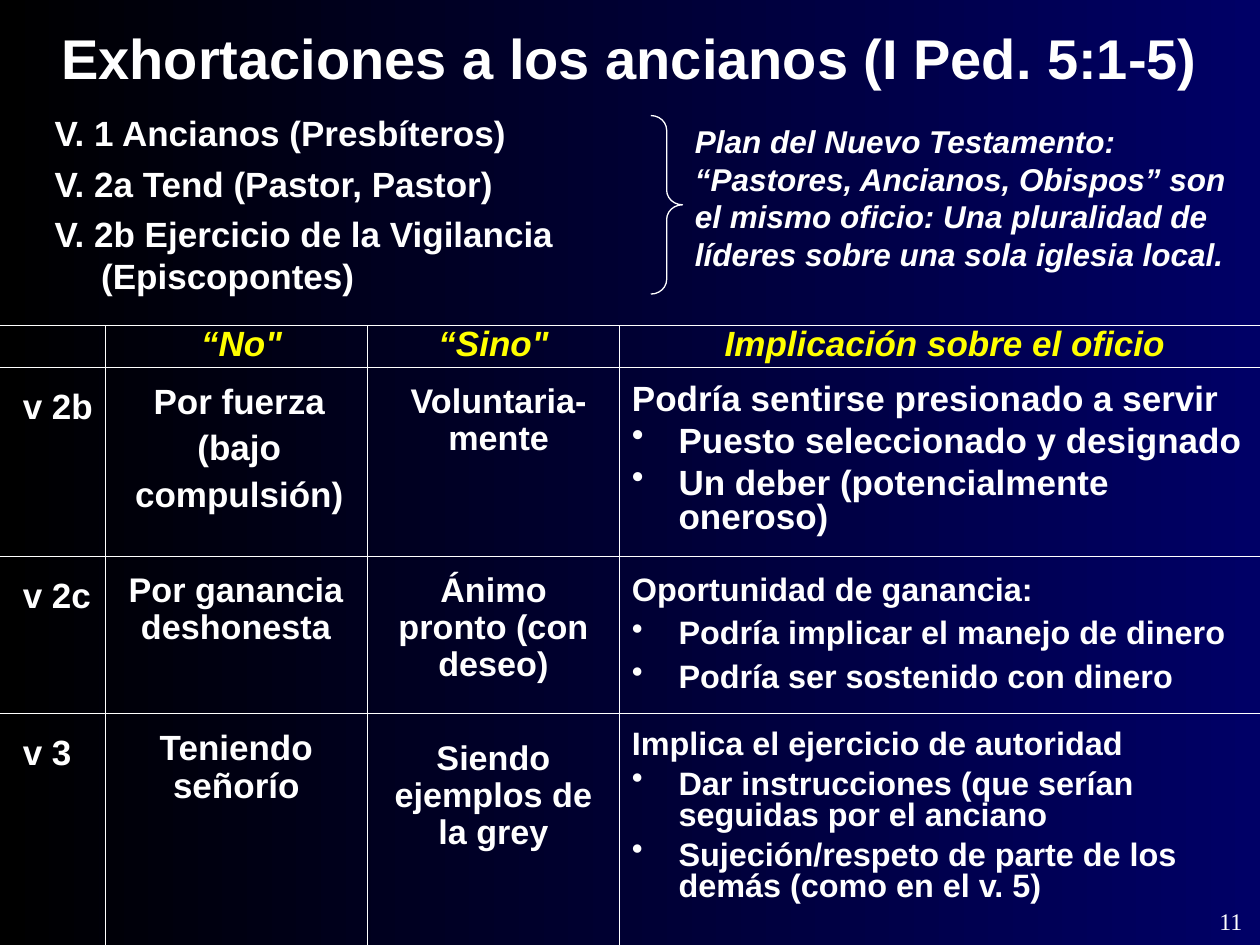
"""Slide of exhortations to elders: verses, a brace with a remark, and a ruled comparison grid."""
from dataclasses import dataclass

from lxml.etree import SubElement
from pptx import Presentation
from pptx.dml.color import RGBColor
from pptx.enum.shapes import MSO_CONNECTOR, MSO_SHAPE
from pptx.enum.text import MSO_ANCHOR, MSO_AUTO_SIZE, PP_ALIGN
from pptx.oxml.ns import qn
from pptx.util import Cm, Pt


@dataclass(frozen=True)
class Theme:
    white: RGBColor = RGBColor(0xFF, 0xFF, 0xFF)
    yellow: RGBColor = RGBColor(0xFF, 0xFF, 0x00)
    dark: RGBColor = RGBColor(0x00, 0x00, 0x00)
    navy: RGBColor = RGBColor(0x00, 0x00, 0x66)
    font: str = "Arial"
    number_font: str = "Times New Roman"
    title: float = 32
    body: float = 20
    cell: float = 19.5
    detail: float = 18.5
    remark: float = 18
    number: float = 13.6
    rule: float = 0.75
    gap: float = 5
    hang: float = 0.94


T = Theme()
WIDTH, HEIGHT = 25.4, 19.05
COLUMN_RULES = [2.12, 7.41, 12.49]
ROW_RULES = [6.56, 7.41, 11.22, 14.39]
CELL_GAP = 0.21

TITLE = "Exhortaciones a los ancianos (I Ped. 5:1-5)"
VERSES = [
    "V. 1 Ancianos (Presbíteros)",
    "V. 2a Tend (Pastor, Pastor)",
    "V. 2b Ejercicio de la Vigilancia (Episcopontes)",
]
REMARK = (
    "Plan del Nuevo Testamento: “Pastores, Ancianos, Obispos” son el mismo oficio: "
    "Una pluralidad de líderes sobre una sola iglesia local."
)
HEADERS = [
    ("“No\"", 3.6, 2.54),
    ("“Sino\"", 8.36, 3.18),
    ("Implicación sobre el oficio", 13.12, 11.86),
]
LABELS = [("v 2b", 2.54), ("v 2c", 4.02), ("v 3", 4.02)]
NO = [
    (["Por fuerza", "(bajo", "compulsión)"], 1.7, 6.25, 3.6, T.body, T.hang),
    (["Por ganancia deshonesta"], 2.12, 5.28, 3.18, T.cell, 0),
    (["Teniendo señorío"], 2.33, 4.87, 4.12, T.body, 0),
]
SINO = [
    ("Voluntaria-mente", 4.87, 3.39, 0),
    ("Ánimo pronto (con deseo)", 4.66, 2.75, 0),
    ("Siendo ejemplos de la grey", 4.66, 3.92, 0.21),
]
IMPLICATIONS = [
    ("Podría sentirse presionado a servir",
     ["Puesto seleccionado y designado", "Un deber (potencialmente oneroso)"],
     12.9, 3.6, T.body, 0.8),
    ("Oportunidad de ganancia:",
     ["Podría implicar el manejo de dinero", "Podría ser sostenido con dinero"],
     12.9, 2.96, T.detail, 0.9),
    ("Implica el ejercicio de autoridad",
     ["Dar instrucciones (que serían seguidas por el anciano",
      "Sujeción/respeto de parte de los demás (como en el v. 5)"],
     12.5, 4.12, T.detail, 0.8),
]


def write(p, text, size, color=T.white, italic=False, bold=True, font=T.font):
    r = p.add_run()
    r.text = text
    f = r.font
    f.name, f.size, f.bold, f.italic = font, Pt(size), bold, italic
    f.color.rgb = color


def add_bullet(p):
    pPr = p._p.get_or_add_pPr()
    clr = SubElement(pPr, qn("a:buClr"))
    SubElement(clr, qn("a:srgbClr"), val=str(T.white))
    SubElement(pPr, qn("a:buChar"), char="•")


def add_text(slide, box, lines, size, bullets=(), align=PP_ALIGN.LEFT, spacing=None,
             margin=T.hang, hang=T.hang, gap=T.gap, **look):
    tf = slide.shapes.add_textbox(*map(Cm, box)).text_frame
    tf.word_wrap = True
    tf.auto_size = MSO_AUTO_SIZE.NONE
    for i, text in enumerate([*lines, *bullets]):
        p = tf.add_paragraph() if i else tf.paragraphs[0]
        p.alignment = align
        p.space_before = Pt(gap)
        if spacing:
            p.line_spacing = spacing
        pPr = p._p.get_or_add_pPr()
        pPr.set("marL", str(Cm(margin)))
        pPr.set("indent", str(-Cm(hang)))
        if i >= len(lines):
            add_bullet(p)
        write(p, text, size, **look)


def add_rule(slide, x1, y1, x2, y2):
    sp = slide.shapes.add_connector(MSO_CONNECTOR.STRAIGHT, Cm(x1), Cm(y1), Cm(x2), Cm(y2))
    sp.line.color.rgb = T.white
    sp.line.width = Pt(T.rule)
    SubElement(sp._element.spPr, qn("a:effectLst"))


def set_background(slide):
    fill = slide.background.fill
    fill.gradient()
    fill.gradient_angle = 0
    for stop, color, position in zip(fill.gradient_stops, (T.dark, T.navy), (0, 1)):
        stop.color.rgb = color
        stop.position = position


def set_title(slide):
    sp = slide.shapes.title
    sp.left, sp.top, sp.width, sp.height = map(Cm, (0, 0.21, WIDTH, 1.9))
    tf = sp.text_frame
    tf.auto_size = MSO_AUTO_SIZE.NONE
    tf.vertical_anchor = MSO_ANCHOR.MIDDLE
    p = tf.paragraphs[0]
    p.alignment = PP_ALIGN.CENTER
    write(p, TITLE, T.title)


def add_intro(slide):
    add_text(slide, (0.85, 2.12, 12.7, 4.02), VERSES, T.body)
    sp = slide.shapes.add_shape(MSO_SHAPE.RIGHT_BRACE, Cm(13.12), Cm(2.33), Cm(0.64), Cm(3.6))
    sp.adjustments[0] = 0.46
    sp.shadow.inherit = False
    sp.fill.background()
    sp.line.color.rgb = T.white
    sp.line.width = Pt(T.rule)
    add_text(slide, (13.76, 2.33, 11.64, 3.36), [REMARK], T.remark,
             margin=0, hang=0, gap=0, italic=True)


def add_grid(slide):
    for x in COLUMN_RULES:
        add_rule(slide, x, ROW_RULES[0], x, HEIGHT)
    for y in ROW_RULES:
        add_rule(slide, 0, y, WIDTH, y)
    for text, left, width in HEADERS:
        add_text(slide, (left, ROW_RULES[0] - CELL_GAP, width, 1.27), [text], T.body,
                 align=PP_ALIGN.CENTER, color=T.yellow, italic=True)
    for rule, label, no, sino, implication in zip(ROW_RULES[1:], LABELS, NO, SINO, IMPLICATIONS):
        top = rule + CELL_GAP
        text, width = label
        add_text(slide, (CELL_GAP, top, width, 1.27), [text], T.body)
        lines, left, width, height, size, margin = no
        add_text(slide, (left, top, width, height), lines, size,
                 align=PP_ALIGN.CENTER, spacing=0.9, margin=margin)
        text, width, height, drop = sino
        add_text(slide, (7.62, top + drop, width, height), [text], T.cell,
                 align=PP_ALIGN.CENTER, spacing=0.9, margin=0)
        lead, bullets, width, height, size, spacing = implication
        add_text(slide, (COLUMN_RULES[2], top, width, height), [lead], size,
                 bullets=bullets, spacing=spacing)


def main():
    prs = Presentation()
    prs.slide_width, prs.slide_height = Cm(WIDTH), Cm(HEIGHT)
    slide = prs.slides.add_slide(prs.slide_layouts[5])
    set_background(slide)
    set_title(slide)
    add_intro(slide)
    add_grid(slide)
    add_text(slide, (24.33, 18.21, 1.07, 0.84), ["11"], T.number, spacing=0.9,
             margin=0, hang=0, gap=0, bold=False, font=T.number_font)
    prs.save("out.pptx")


if __name__ == "__main__":
    main()
